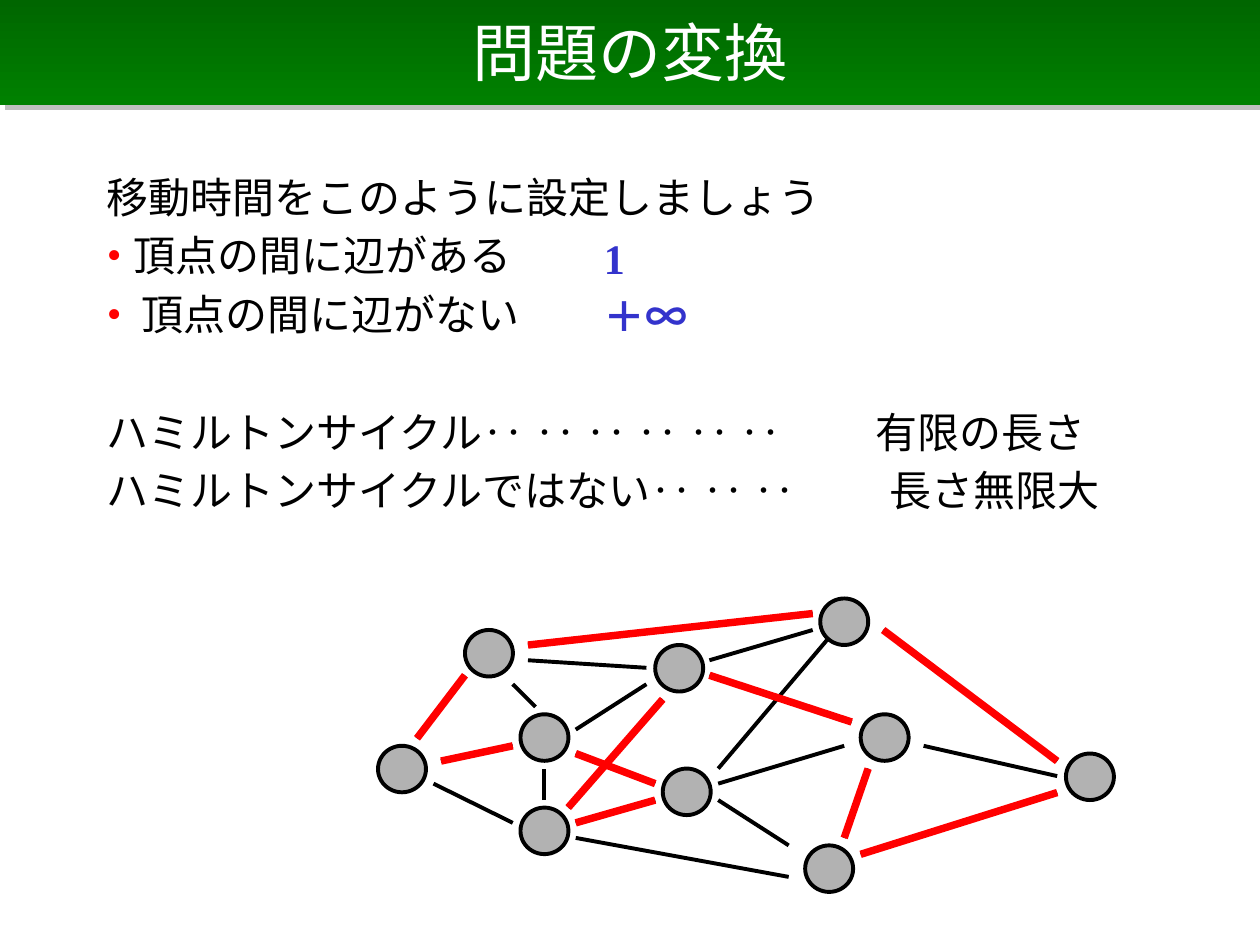
from lxml import etree
from pptx import Presentation
from pptx.dml.color import RGBColor
from pptx.enum.shapes import MSO_CONNECTOR, MSO_SHAPE
from pptx.enum.text import MSO_ANCHOR, PP_ALIGN
from pptx.oxml.ns import qn
from pptx.util import Pt

LINE = MSO_CONNECTOR.STRAIGHT
RECT, OVAL = MSO_SHAPE.RECTANGLE, MSO_SHAPE.OVAL
TOP, MIDDLE = MSO_ANCHOR.TOP, MSO_ANCHOR.MIDDLE
CENTER = PP_ALIGN.CENTER

COLORS = {
    "black": "000000", "white": "FFFFFF", "red": "FF0000", "blue": "3333CC",
    "node": "B2B2B2", "dark": "006600", "green": "008000", "shadow": "808080",
}
NODE_W, NODE_H = 27.4, 26.6
BODY_SIZE, GAP, BLANK_GAP = 24, 4.8, 38.3

# Left and top of each vertex
NODES = [
    (374.4, 368.6), (378.7, 439.2), (460.1, 483.1), (491.8, 408.2),
    (468.7, 342), (216, 426.2), (609.1, 430.6), (265.7, 360),
    (297.4, 408.2), (297.4, 461.5),
]
# Start x, y and end x, y of each edge
CYCLE = [
    (504.7, 360, 604.1, 434.9), (491.8, 488.2, 604.1, 452.9),
    (496.1, 439.2, 482.4, 478.8), (405.4, 385.9, 486.7, 412.6),
    (378.7, 399.6, 324.7, 461.5), (329, 470.2, 374.4, 457.2),
    (329, 430.6, 374.4, 447.8), (252, 434.9, 293, 426.2),
    (238.3, 421.9, 265.7, 385.9), (301.7, 368.6, 464.4, 350.6),
]
OTHER_EDGES = [
    (301.7, 377.3, 369.4, 381.6), (329, 416.9, 369.4, 391),
    (329, 478.8, 450.7, 501.1), (405.4, 377.3, 464.4, 360),
    (410.4, 447.8, 482.4, 426.2), (410.4, 457.2, 450.7, 483.1),
    (247.7, 447.8, 293, 470.2), (527.8, 426.2, 604.1, 443.5),
    (410.4, 439.2, 473.8, 364.3), (311, 457.2, 311, 439.2),
    (306, 403.9, 293, 391),
]


def rgb(name):
    return RGBColor.from_string(COLORS[name])


def add_xml(parent, tag, **attrs):
    return etree.SubElement(parent, qn(tag), attrs)


class Deck:
    def __init__(self, prs, font):
        self.font = font
        self.s = prs.slides.add_slide(prs.slide_layouts[6])

    def run(self, p, text, size, color, bold=False):
        r = p.add_run()
        r.text = text
        r.font.name = self.font
        r.font.size = Pt(size)
        r.font.bold = bold
        r.font.color.rgb = rgb(color)

    def banner(self, text, x, y, w, h):
        sp = self.s.shapes.add_shape(RECT, Pt(x), Pt(y), Pt(w), Pt(h))
        sp.line.fill.background()
        sp.fill.gradient()
        sp.fill.gradient_angle = 270
        for stop, color, pos in zip(sp.fill.gradient_stops, ("dark", "green"), (0, 1)):
            stop.color.rgb = rgb(color)
            stop.position = pos
        sp.shadow.inherit = False
        effects = sp._element.spPr.find(qn("a:effectLst"))
        shadow = add_xml(effects, "a:outerShdw", dist=str(Pt(4.2)),
                         dir="2700000", algn="ctr", rotWithShape="0")
        color = add_xml(shadow, "a:srgbClr", val=COLORS["shadow"])
        add_xml(color, "a:alpha", val="50000")
        sp.text_frame.vertical_anchor = MIDDLE
        p = sp.text_frame.paragraphs[0]
        p.alignment = CENTER
        self.run(p, text, 36, "white")

    def text_frame(self, x, y, w, h, anchor=TOP):
        tf = self.s.shapes.add_textbox(Pt(x), Pt(y), Pt(w), Pt(h)).text_frame
        tf.word_wrap = True
        tf.vertical_anchor = anchor
        return tf

    def paragraph(self, p, text, gap=GAP, bullet=0, tab=0):
        """Fill p; bullet is the hanging indent, tab the stop for the last part."""
        p.space_before = Pt(gap)
        pPr = p._p.get_or_add_pPr()
        if bullet:
            pPr.set("marL", str(Pt(bullet)))
            pPr.set("indent", str(-Pt(bullet)))
            add_xml(add_xml(pPr, "a:buClr"), "a:srgbClr", val=COLORS["red"])
            add_xml(pPr, "a:buFont", typeface=self.font)
            add_xml(pPr, "a:buChar", char="•")
        if tab:
            add_xml(add_xml(pPr, "a:tabLst"), "a:tab", pos=str(Pt(tab)), algn="l")
        self.run(p, text, BODY_SIZE, "black")

    def value(self, text, x, middle):
        tf = self.text_frame(x, middle - 18, 80, 36, MIDDLE)
        self.run(tf.paragraphs[0], text, BODY_SIZE, "blue", bold=True)

    def node(self, x, y):
        sp = self.s.shapes.add_shape(OVAL, Pt(x), Pt(y), Pt(NODE_W), Pt(NODE_H))
        sp.shadow.inherit = False
        sp.fill.solid()
        sp.fill.fore_color.rgb = rgb("node")
        sp.line.color.rgb = rgb("black")
        sp.line.width = Pt(2.25)

    def edge(self, ends, color, width):
        c = self.s.shapes.add_connector(LINE, *map(Pt, ends))
        c.line.color.rgb = rgb(color)
        c.line.width = Pt(width)
        add_xml(c._element.spPr, "a:effectLst")


def main():
    prs = Presentation()
    prs.slide_width, prs.slide_height = Pt(720), Pt(540)
    deck = Deck(prs, "Times New Roman")
    deck.banner("問題の変換", 0, -0.7, 720, 60.5)

    lines = [
        ("移動時間をこのように設定しましょう", {}),
        ("頂点の間に辺がある", {"bullet": 15}),
        ("頂点の間に辺がない", {"bullet": 20}),
        ("ハミルトンサイクル‥ ‥ ‥ ‥ ‥ ‥\t有限の長さ", {"gap": BLANK_GAP, "tab": 439}),
        ("ハミルトンサイクルではない‥ ‥ ‥\t長さ無限大", {"tab": 447}),
    ]
    tf = deck.text_frame(54, 94.3, 618, 258)
    for i, (text, layout) in enumerate(lines):
        p = tf.add_paragraph() if i else tf.paragraphs[0]
        deck.paragraph(p, text, **layout)
    for text, middle in (("1", 147.5), ("＋∞", 180.5)):
        deck.value(text, 338, middle)

    for x, y in NODES:
        deck.node(x, y)
    for ends in OTHER_EDGES + CYCLE:
        deck.edge(ends, "black", 2.25)
    for ends in CYCLE:
        deck.edge(ends, "red", 4.25)
    prs.save("out.pptx")


if __name__ == "__main__":
    main()
